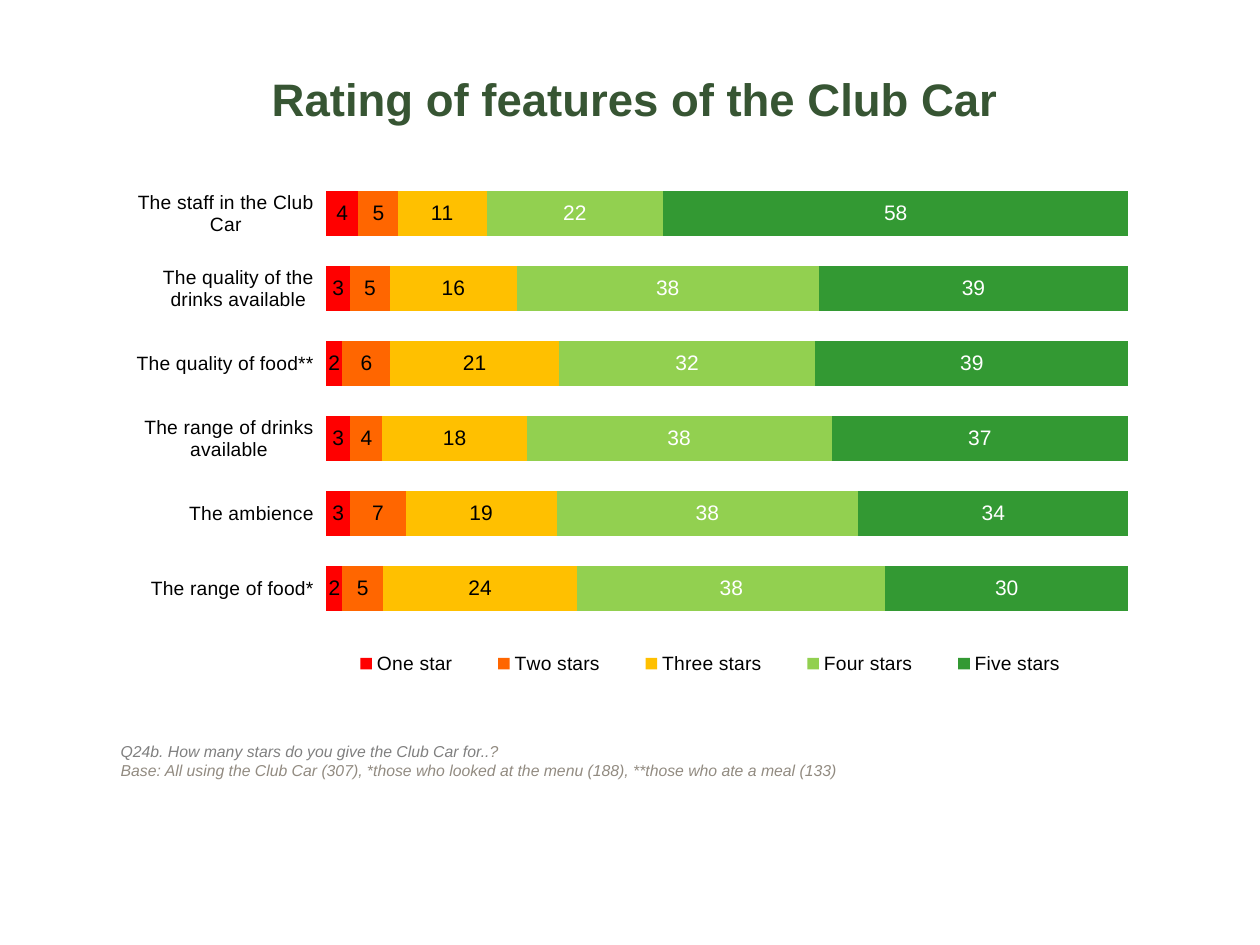
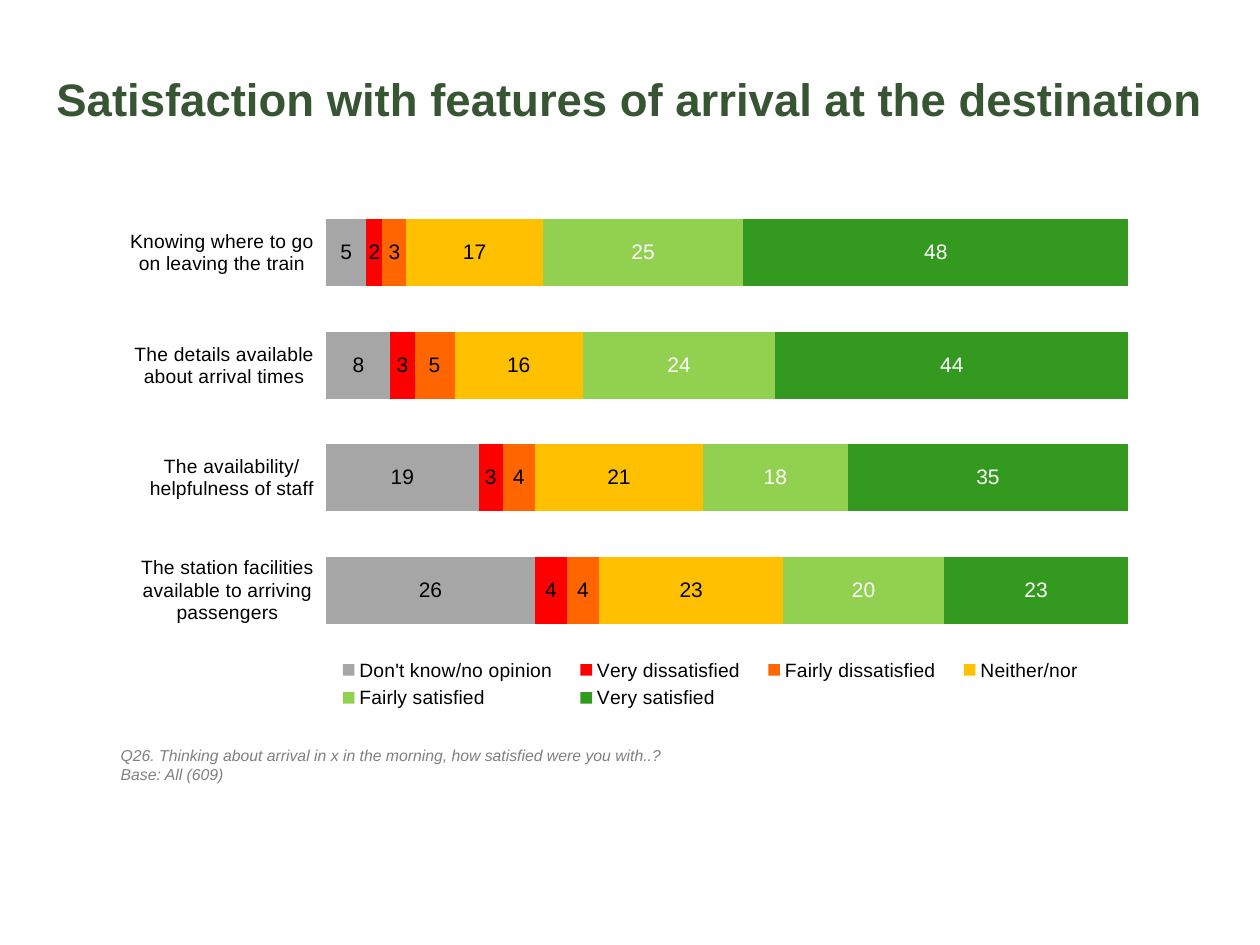
from pptx import Presentation
from pptx.chart.data import CategoryChartData
from pptx.dml.color import RGBColor
from pptx.enum.chart import XL_CHART_TYPE, XL_LEGEND_POSITION, XL_TICK_MARK
from pptx.enum.text import MSO_ANCHOR, MSO_AUTO_SIZE, PP_ALIGN
from pptx.oxml import parse_xml
from pptx.oxml.ns import nsdecls, qn
from pptx.util import Inches, Pt

BARS = XL_CHART_TYPE.BAR_STACKED_100
BOTTOM = XL_LEGEND_POSITION.BOTTOM
OUTSIDE = XL_TICK_MARK.OUTSIDE
TOP = MSO_ANCHOR.TOP
FIXED, GROW = MSO_AUTO_SIZE.NONE, MSO_AUTO_SIZE.SHAPE_TO_FIT_TEXT
CENTER = PP_ALIGN.CENTER

TITLE_ONLY = 5
COLORS = {
    "title": "375533", "black": "000000", "white": "FFFFFF",
    "note": "808080", "warm note": "928B81",
    "gray": "A6A6A6", "red": "FF0000", "orange": "FF6600", "amber": "FFC000",
    "light green": "92D050", "green": "339933", "deep green": "33991F",
}
TITLE_FONT = {"name": "Arial", "size": Pt(26), "bold": True}
NOTE_FONT = {"name": "Arial", "size": Pt(9), "italic": True}
CHART_FONT = {"name": "Arial", "size": Pt(18)}
AXIS_FONT = {"name": "Arial", "size": Pt(11)}
LABEL_FONT = {"name": "Arial", "size": Pt(12)}
WHITE_LABELS = ("light green", "green", "deep green")
PLOT_LAYOUT = {"x": 0.199, "y": 0.139, "w": 0.782, "h": 0.732}
LEGEND_LAYOUT = {"x": 0.194, "y": 0.882, "w": 0.759, "h": 0.1}

CLUB_CAR = {
    "title": "Rating of features of the Club Car",
    "title box": (0.64, 0.51, 8.8, 0.66),
    "chart box": (0.97, 0.72, 8.14, 4.88),
    "categories": [
        "The staff in the Club Car", "The quality of the drinks available",
        "The quality of food**", "The range of drinks available",
        "The ambience", "The range of food*"],
    "series": [
        ("One star", "red", (4, 3, 2, 3, 3, 2)),
        ("Two stars", "orange", (5, 5, 6, 4, 7, 5)),
        ("Three stars", "amber", (11, 16, 21, 18, 19, 24)),
        ("Four stars", "light green", (22, 38, 32, 38, 38, 38)),
        ("Five stars", "green", (58, 39, 39, 37, 34, 30))],
    "note box": (0.86, 5.84, 7.73, 0.4),
    "note": [
        [("Q24b. How many stars do you give the Club Car for..", "note"),
         ("?", "warm note")],
        [("Base: All using the Club Car (307), *those who looked at the menu "
          "(188), **those who ate a meal (133)", "warm note")]],
}
ARRIVAL = {
    "title": "Satisfaction with features of arrival at the destination",
    "title box": (0, 0.51, 10, 0.66),
    "chart box": (0.97, 0.88, 8.14, 4.88),
    "categories": [
        "Knowing where to go on leaving the train",
        "The details available about arrival times",
        "The availability/ helpfulness of staff",
        "The station facilities available to arriving passengers"],
    "series": [
        ("Don't know/no opinion", "gray", (5, 8, 19, 26)),
        ("Very dissatisfied", "red", (2, 3, 3, 4)),
        ("Fairly dissatisfied", "orange", (3, 5, 4, 4)),
        ("Neither/nor", "amber", (17, 16, 21, 23)),
        ("Fairly satisfied", "light green", (25, 24, 18, 20)),
        ("Very satisfied", "deep green", (48, 44, 35, 23))],
    "note box": (0.86, 5.87, 7.73, 0.4),
    "note": [
        [("Q26. Thinking about arrival in x in the morning, how satisfied "
          "were you with..?", "note")],
        [("Base: All (609)", "note")]],
}


def set_values(target, values):
    """Set every attribute named in a dict of values."""
    for name, value in values.items():
        setattr(target, name, value)


def style_font(font, values, color):
    """Apply format values and a named colour to a font."""
    set_values(font, values)
    font.color.rgb = RGBColor.from_string(COLORS[color])


def layout_element(fractions, inner=False):
    """Return a manual chart layout given as fractions of the chart."""
    target = '<c:layoutTarget val="inner"/>' if inner else ""
    modes = "".join(f'<c:{axis}Mode val="edge"/>' for axis in "xy")
    sizes = "".join(f'<c:{key} val="{value}"/>' for key, value in fractions.items())
    return parse_xml(f'<c:layout {nsdecls("c")}><c:manualLayout>'
                     f'{target}{modes}{sizes}</c:manualLayout></c:layout>')


def place_chart_parts(chart):
    """Fix the plot and legend areas inside the chart."""
    plot_area = chart.element.find(".//" + qn("c:plotArea"))
    legend = chart.element.find(".//" + qn("c:legend"))
    for parent in (plot_area, legend):
        for layout in parent.findall(qn("c:layout")):
            parent.remove(layout)
    plot_area.insert(0, layout_element(PLOT_LAYOUT, inner=True))
    legend.find(qn("c:legendPos")).addnext(layout_element(LEGEND_LAYOUT))


def add_title(slide, box, text):
    """Fill the title placeholder and move it to its box."""
    title = slide.shapes.title
    set_values(title, dict(zip(("left", "top", "width", "height"), map(Inches, box))))
    frame = title.text_frame
    frame.text = text
    set_values(frame, {"vertical_anchor": TOP, "auto_size": FIXED, "word_wrap": True})
    paragraph = frame.paragraphs[0]
    paragraph.alignment = CENTER
    style_font(paragraph.runs[0].font, TITLE_FONT, "title")


def add_rating_chart(slide, box, categories, series_rows):
    """Add a stacked percentage bar chart with labelled segments."""
    data = CategoryChartData()
    data.categories = categories
    for name, color, values in series_rows:
        data.add_series(name, values)
    chart = slide.shapes.add_chart(BARS, *map(Inches, box), data).chart
    style_font(chart.font, CHART_FONT, "black")
    set_values(chart, {"has_title": False, "has_legend": True})
    set_values(chart.legend, {"position": BOTTOM, "include_in_layout": False})
    style_font(chart.legend.font, AXIS_FONT, "black")
    set_values(chart.value_axis, {"visible": False, "has_major_gridlines": False})
    axis = chart.category_axis
    set_values(axis, {"reverse_order": True, "major_tick_mark": OUTSIDE})
    axis.format.line.fill.background()
    style_font(axis.tick_labels.font, AXIS_FONT, "black")
    plot = chart.plots[0]
    set_values(plot, {"gap_width": 68, "overlap": 100, "vary_by_categories": False})
    for series, (name, color, values) in zip(plot.series, series_rows):
        series.format.fill.solid()
        series.format.fill.fore_color.rgb = RGBColor.from_string(COLORS[color])
        series.data_labels.show_value = True
        label_color = "white" if color in WHITE_LABELS else "black"
        style_font(series.data_labels.font, LABEL_FONT, label_color)
    place_chart_parts(chart)


def add_note(slide, box, lines):
    """Add the question and base lines below the chart."""
    frame = slide.shapes.add_textbox(*map(Inches, box)).text_frame
    set_values(frame, {"word_wrap": True, "auto_size": GROW})
    for index, pieces in enumerate(lines):
        paragraph = frame.add_paragraph() if index else frame.paragraphs[0]
        for text, color in pieces:
            run = paragraph.add_run()
            run.text = text
            style_font(run.font, NOTE_FONT, color)


def add_rating_slide(presentation, content):
    """Add a slide with a title, a rating chart and a note."""
    slide = presentation.slides.add_slide(presentation.slide_layouts[TITLE_ONLY])
    add_title(slide, content["title box"], content["title"])
    add_rating_chart(slide, content["chart box"], content["categories"], content["series"])
    add_note(slide, content["note box"], content["note"])


def main():
    """Build and save the presentation."""
    presentation = Presentation()
    set_values(presentation, {"slide_width": Inches(10), "slide_height": Inches(7.5)})
    for content in (CLUB_CAR, ARRIVAL):
        add_rating_slide(presentation, content)
    presentation.save("out.pptx")


if __name__ == "__main__":
    main()
